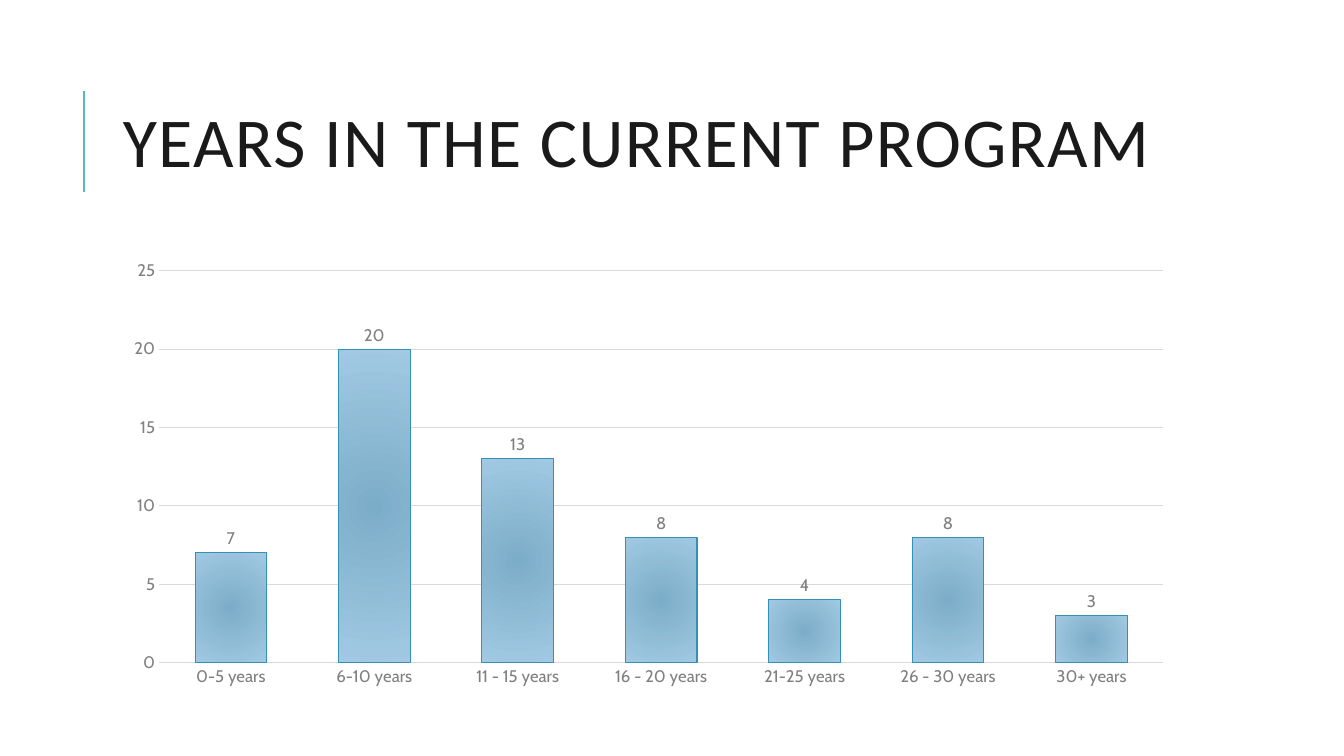
from lxml import etree
from pptx import Presentation
from pptx.chart.data import CategoryChartData
from pptx.dml.color import RGBColor
from pptx.enum.chart import XL_CHART_TYPE as ChartType, XL_LABEL_POSITION as LabelPosition
from pptx.enum.chart import XL_TICK_MARK as TickMark
from pptx.enum.shapes import MSO_CONNECTOR as Connector
from pptx.enum.text import MSO_ANCHOR as Anchor
from pptx.oxml import parse_xml
from pptx.oxml.ns import nsdecls, qn
from pptx.util import Inches, Pt

TITLE = "YEARS IN THE CURRENT PROGRAM"
YEARS = {
    "0-5 years": 7,
    "6-10 years": 20,
    "11 - 15 years": 13,
    "16 - 20 years": 8,
    "21-25 years": 4,
    "26 - 30 years": 8,
    "30+ years": 3,
}


class Theme:
    accent = RGBColor.from_string("58B6C0")
    grid = RGBColor.from_string("D9D9D9")
    bar_line = RGBColor.from_string("3391B6")
    bar_center, bar_edge = "7CADC8", "A1C9E3"
    title = {"name": "Calibri", "size": Pt(50), "color": RGBColor.from_string("1A1A1A")}
    chart = {"name": "Cabin", "size": Pt(10), "color": RGBColor.from_string("000000")}
    label = {"name": "Cabin", "size": Pt(12), "color": RGBColor.from_string("808080")}
    hairline = Pt(0.75)


LEFT, WIDTH = Inches(1.12), Inches(10.63)


def set_font(font, formats):
    for name, value in formats.items():
        if name == "color":
            font.color.rgb = value
        else:
            setattr(font, name, value)


def set_line(line, color, width):
    line.color.rgb = color
    line.width = width


def fill_radial(shape_format, center, edge):
    """Fill with a circular gradient, which python-pptx has no method for."""
    shape_format.fill.solid()
    solid = shape_format.fill._xPr.find(qn("a:solidFill"))
    gradient = parse_xml(
        f'<a:gradFill {nsdecls("a")} rotWithShape="1"><a:gsLst>'
        f'<a:gs pos="0"><a:srgbClr val="{center}"/></a:gs>'
        f'<a:gs pos="100000"><a:srgbClr val="{edge}"/></a:gs></a:gsLst>'
        '<a:path path="circle"><a:fillToRect l="100000" t="100000" r="100000" b="100000"/>'
        "</a:path></a:gradFill>"
    )
    solid.getparent().replace(solid, gradient)


def add_title(page):
    rule = page.shapes.add_connector(
        Connector.STRAIGHT, Inches(0.83), Inches(1.9), Inches(0.83), Inches(0.9))
    set_line(rule.line, Theme.accent, Pt(1.5))
    etree.SubElement(rule._element.spPr, qn("a:effectLst"))

    box = page.shapes.add_textbox(LEFT, Inches(0.64), WIDTH, Inches(1.64))
    box.text_frame.word_wrap = True
    box.text_frame.vertical_anchor = Anchor.MIDDLE
    para = box.text_frame.paragraphs[0]
    para.line_spacing = 0.8
    span = para.add_run()
    span.text = TITLE
    set_font(span.font, Theme.title)
    span.font._element.set("spc", "100")


def add_years_chart(page):
    data = CategoryChartData()
    data.categories = YEARS.keys()
    data.add_series("Series 1", YEARS.values())
    chart = page.shapes.add_chart(
        ChartType.COLUMN_CLUSTERED, LEFT, Inches(2.5), WIDTH, Inches(4.4), data).chart
    chart.has_legend = False
    chart.has_title = False
    set_font(chart.font, Theme.chart)

    for axis in (chart.category_axis, chart.value_axis):
        axis.major_tick_mark = axis.minor_tick_mark = TickMark.NONE
        set_font(axis.tick_labels.font, Theme.label)
    set_line(chart.category_axis.format.line, Theme.grid, Theme.hairline)
    chart.value_axis.format.line.fill.background()
    chart.value_axis.has_major_gridlines = True
    set_line(chart.value_axis.major_gridlines.format.line, Theme.grid, Theme.hairline)

    plot = chart.plots[0]
    plot.vary_by_categories = False
    plot.gap_width, plot.overlap = 100, -24
    bars = plot.series[0]
    fill_radial(bars.format, Theme.bar_center, Theme.bar_edge)
    set_line(bars.format.line, Theme.bar_line, Theme.hairline)
    labels = bars.data_labels
    labels.show_value = True
    labels.position = LabelPosition.OUTSIDE_END
    set_font(labels.font, Theme.label)


def main():
    deck = Presentation()
    deck.slide_width, deck.slide_height = Inches(13.33), Inches(7.5)
    page = deck.slides.add_slide(deck.slide_layouts[6])
    add_title(page)
    add_years_chart(page)
    deck.save("out.pptx")


if __name__ == "__main__":
    main()
